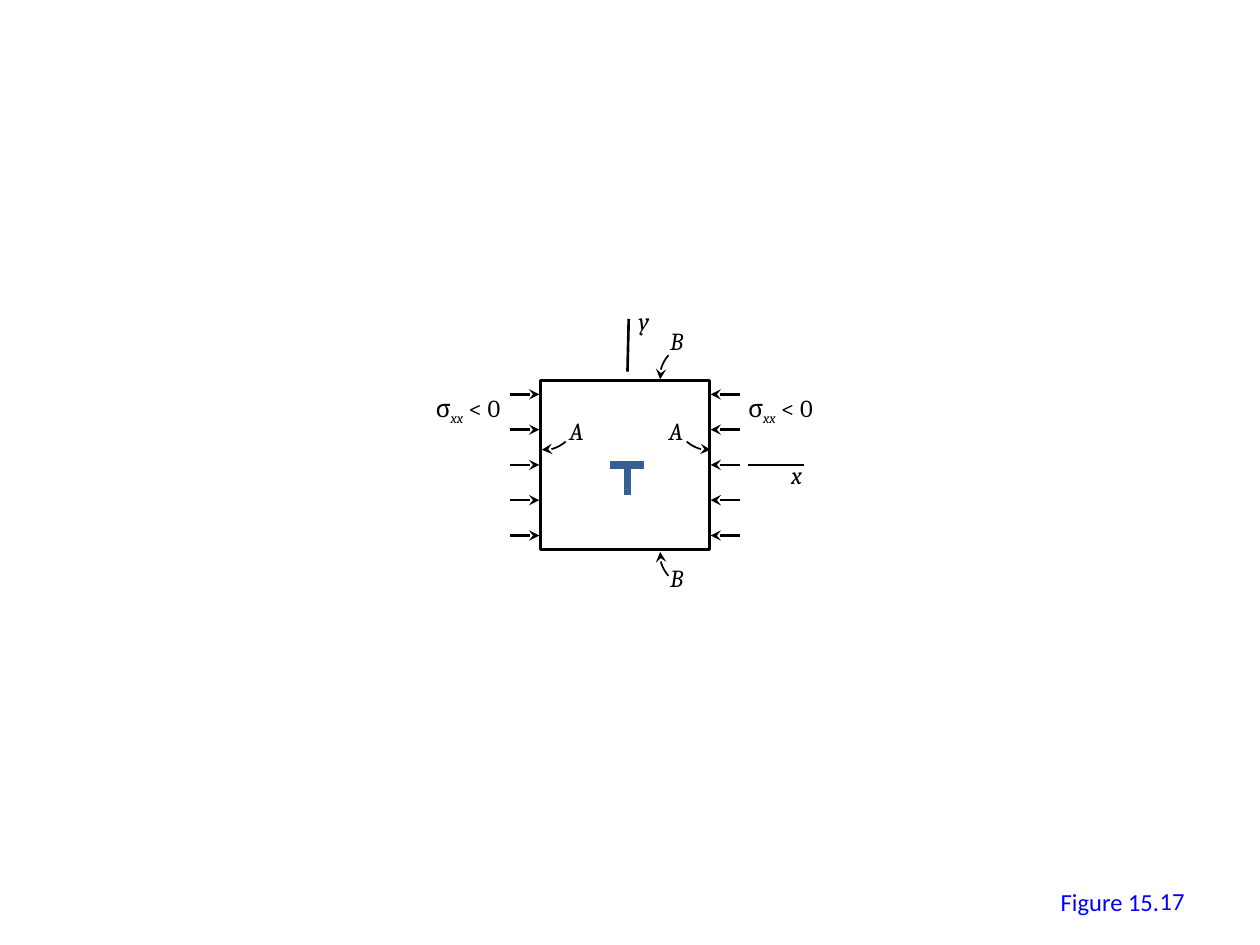
from lxml import etree
from pptx import Presentation
from pptx.dml.color import RGBColor
from pptx.enum.shapes import MSO_CONNECTOR, MSO_SHAPE
from pptx.enum.text import MSO_ANCHOR, PP_ALIGN
from pptx.oxml.ns import qn
from pptx.util import Inches, Pt

STRAIGHT = MSO_CONNECTOR.STRAIGHT
RECTANGLE = MSO_SHAPE.RECTANGLE
TOP, MIDDLE = MSO_ANCHOR.TOP, MSO_ANCHOR.MIDDLE
LEFT, RIGHT = PP_ALIGN.LEFT, PP_ALIGN.RIGHT
BLACK = RGBColor(0x00, 0x00, 0x00)
BLUE = RGBColor(0x00, 0x00, 0xFF)
STEEL = RGBColor(0x37, 0x60, 0x92)

prs = Presentation()
prs.slide_width, prs.slide_height = Inches(10), Inches(7.5)
s = prs.slides.add_slide(prs.slide_layouts[6])
U = prs.slide_width // 100


def add_line(x1, y1, x2, y2, color=BLACK, width=1.5, arrow=False):
    line = s.shapes.add_connector(
        STRAIGHT, *[round(v * U) for v in (x1, y1, x2, y2)])
    line.line.color.rgb = color
    line.line.width = Pt(width)
    etree.SubElement(line._element.spPr, qn("a:effectLst"))
    if arrow:
        etree.SubElement(line.line._get_or_add_ln(), qn("a:tailEnd"), type="stealth")


def add_text(x, y, w, h, runs, font="Cambria", color=BLACK,
             align=LEFT, anchor=TOP, wrap=False):
    tf = s.shapes.add_textbox(*[round(v * U) for v in (x, y, w, h)]).text_frame
    tf.word_wrap = wrap
    tf.vertical_anchor = anchor
    p = tf.paragraphs[0]
    p.alignment = align
    for text, italic, baseline in runs:
        r = p.add_run()
        r.text = text
        for name, value in {"name": font, "size": Pt(14), "italic": italic}.items():
            setattr(r.font, name, value)
        r.font.color.rgb = color
        if baseline:
            r.font._element.set("baseline", str(baseline))


add_text(83.2, 69.9, 9.9, 3.4, [("Figure 15.", False, 0)], "Calibri", BLUE)
add_text(71.7, 69.5, 23.3, 4, [("17", False, 0)], "Calibri", BLUE, RIGHT, MIDDLE, True)

left, top, side = 42.9, 30.2, 13.4
mid_x, mid_y = left + side / 2, top + side / 2

add_line(63.8, mid_y, 59.4, mid_y)
add_line(49.9, 25.3, 49.8, 29.5)
add_line(51.1, mid_y, 48.4, mid_y, STEEL, 4.5)
add_line(49.8, mid_y, 49.8, 39.3, STEEL, 4.5)

square = s.shapes.add_shape(
    RECTANGLE, *[round(v * U) for v in (left, top, side, side)])
square.shadow.inherit = False
square.fill.background()
square.line.color.rgb = BLACK
square.line.width = Pt(1.5)

for row in range(-2, 3):
    y = mid_y + row * 2.8
    for direction in (-1, 1):
        add_line(mid_x + direction * 9.15, y, mid_x + direction * 6.8, y, arrow=True)

POINTERS = [
    (52.4, 30.1, (0, -1), (1, 0)),
    (52.4, 43.8, (0, 1), (1, 0)),
    (43, 35.7, (1, 0), (0, -1)),
    (56.4, 35.7, (-1, 0), (0, -1)),
]
STEPS = 8
for x, y, along, across in POINTERS:
    points = []
    for i in range(STEPS + 1):
        t = i / STEPS
        a = 2 * t * (1 - t) * 1 + t * t * 1.9
        c = -2 * t * (1 - t) * 0.1 + t * t * 0.65
        points.append(((x + a * along[0] + c * across[0]) * U,
                       (y + a * along[1] + c * across[1]) * U))
    fb = s.shapes.build_freeform(*points[0])
    fb.add_line_segments(points[1:], close=False)
    curve = fb.convert_to_shape()
    curve.shadow.inherit = False
    curve.fill.background()
    curve.line.color.rgb = BLACK
    curve.line.width = Pt(1)
    etree.SubElement(curve.line._get_or_add_ln(), qn("a:headEnd"), type="stealth")

for letter, x, y, w in [("y", 49.7, 23.8, 3.4), ("x", 61.8, 36, 3.4),
                        ("A", 44.2, 32.5, 3.7), ("A", 52.1, 32.5, 3.7),
                        ("B", 52.2, 25.4, 3.7), ("B", 52.2, 44.2, 3.7)]:
    add_text(x, y, w, 3.4, [(letter, True, 0)])

for x in (33.6, 58.4):
    add_text(x, 30.7, 7.3, 3.4,
             [("σ", False, 0), ("xx", True, -25000), (" < 0", False, 0)])

prs.save("out.pptx")
